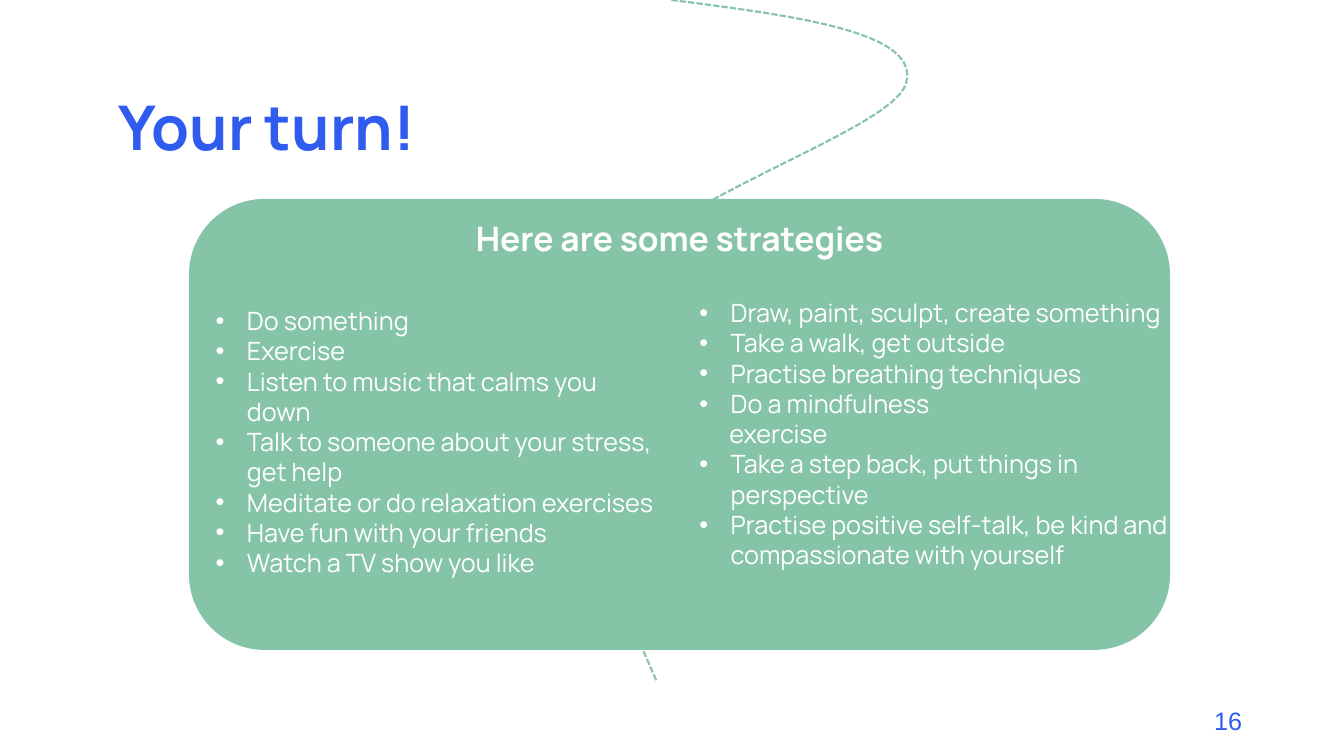
from lxml import etree
from pptx import Presentation
from pptx.dml.color import RGBColor
from pptx.enum.dml import MSO_LINE
from pptx.enum.shapes import MSO_SHAPE
from pptx.enum.text import MSO_ANCHOR, MSO_AUTO_SIZE, PP_ALIGN
from pptx.oxml.ns import qn
from pptx.util import Cm, Pt

ROUNDED = MSO_SHAPE.ROUNDED_RECTANGLE
DASH = MSO_LINE.SQUARE_DOT
TOP, MIDDLE = MSO_ANCHOR.TOP, MSO_ANCHOR.MIDDLE
NO_FIT, GROW = MSO_AUTO_SIZE.NONE, MSO_AUTO_SIZE.SHAPE_TO_FIT_TEXT
LEFT, CENTER, RIGHT = PP_ALIGN.LEFT, PP_ALIGN.CENTER, PP_ALIGN.RIGHT

GREEN, BLUE, WHITE = "86C4A7", "2F5CEE", "FFFFFF"
PATH_START = (16.92, 0)
PATH_CURVES = [
    ((20.1, 0.41), (23.22, 0.81), (22.83, 2.11)),
    ((22.45, 3.4), (15.67, 5.31), (14.61, 7.8)),
    ((13.56, 10.31), (15.04, 13.72), (16.54, 17.15)),
]
CURVE_STEPS = 32

LEFT_STRATEGIES = [
    "Do something",
    "Exercise",
    "Listen to music that calms you down",
    "Talk to someone about your stress, get help",
    "Meditate or do relaxation exercises",
    "Have fun with your friends",
    "Watch a TV show you like",
]
RIGHT_STRATEGIES = [
    "Draw, paint, sculpt, create something",
    "Take a walk, get outside",
    "Practise breathing techniques",
    ("Do a mindfulness", "exercise"),
    "Take a step back, put things in perspective",
    "Practise positive self-talk, be kind and compassionate with yourself",
]


def color(hex_value):
    """Return the colour for a hex string."""
    return RGBColor.from_string(hex_value)


def apply_format(target, values):
    """Set every attribute named in a dict of format values."""
    for attribute, value in values.items():
        setattr(target, attribute, value)


def place(shape, left, top, width, height):
    """Move and size a shape, in centimetres."""
    apply_format(shape, {"left": Cm(left), "top": Cm(top),
                         "width": Cm(width), "height": Cm(height)})


def bring_to_front(shape):
    """Move a shape to the end of the drawing order."""
    element = shape.element
    element.getparent().append(element)


def write(paragraph, text, size, hex_value, font="Manrope", bold=False, **layout):
    """Write one formatted run into a paragraph."""
    apply_format(paragraph, {"space_before": Pt(0), **layout})
    run = paragraph.add_run()
    run.text = text
    apply_format(run.font, {"name": font, "size": Pt(size), "bold": bold})
    run.font.color.rgb = color(hex_value)


def set_bullet(paragraph, margin, bullet):
    """Give a paragraph its left margin and a hanging bullet, or none."""
    properties = paragraph._p.get_or_add_pPr()
    properties.set("marL", str(Cm(margin)))
    properties.set("indent", str(Cm(-margin if bullet else 0)))
    if bullet:
        etree.SubElement(properties, qn("a:buFont")).set("typeface", "Arial")
        etree.SubElement(properties, qn("a:buChar")).set("char", "•")
    else:
        etree.SubElement(properties, qn("a:buNone"))


def bezier_points(start, curves):
    """Yield points in EMU along a chain of cubic curves."""
    for first, second, end in curves:
        for step in range(1, CURVE_STEPS + 1):
            t = step / CURVE_STEPS
            yield tuple(
                Cm((1 - t) ** 3 * a + 3 * (1 - t) ** 2 * t * b
                   + 3 * (1 - t) * t ** 2 * c + t ** 3 * d)
                for a, b, c, d in zip(start, first, second, end))
        start = end


def add_winding_path(slide):
    """Draw the dashed path that winds behind the card."""
    builder = slide.shapes.build_freeform(*map(Cm, PATH_START))
    builder.add_line_segments(bezier_points(PATH_START, PATH_CURVES), close=False)
    winding_path = builder.convert_to_shape()
    winding_path.shadow.inherit = False
    winding_path.fill.background()
    apply_format(winding_path.line, {"width": Pt(1.5), "dash_style": DASH})
    winding_path.line.color.rgb = color(GREEN)


def add_page_number(slide, number):
    """Add the page number at the lower right."""
    page_number = slide.shapes.add_textbox(Cm(23.93), Cm(17.65), Cm(7.62), Cm(1.02))
    page_number.text_frame.word_wrap = True
    write(page_number.text_frame.paragraphs[0], number, 18, BLUE,
          font="Arial", alignment=RIGHT)


def add_card(slide, heading):
    """Add the rounded card with its heading."""
    card = slide.shapes.add_shape(ROUNDED, Cm(4.78), Cm(5.03), Cm(24.69), Cm(11.33))
    card.shadow.inherit = False
    card.fill.solid()
    card.fill.fore_color.rgb = color(GREEN)
    card.line.color.rgb = color(GREEN)
    card.line.width = Pt(1)
    apply_format(card.text_frame, {"vertical_anchor": TOP, "margin_top": Cm(-0.1),
                                   "word_wrap": True})
    write(card.text_frame.paragraphs[0], heading, 24, WHITE,
          bold=True, alignment=CENTER)


def fill_title(title, text):
    """Place and write the slide title."""
    place(title, 2.74, 1.45, 29.21, 3.68)
    apply_format(title.text_frame, {"vertical_anchor": MIDDLE, "auto_size": NO_FIT})
    write(title.text_frame.paragraphs[0], text, 44, BLUE,
          bold=True, alignment=LEFT, line_spacing=0.9)
    bring_to_front(title)


def fill_strategies(body, strategies, box):
    """Write a bulleted list; a pair holds an item and its continuation."""
    place(body, *box)
    frame = body.text_frame
    apply_format(frame, {"vertical_anchor": TOP, "auto_size": GROW})
    lines = []
    for strategy in strategies:
        parts = (strategy,) if isinstance(strategy, str) else strategy
        lines += [(part, level) for level, part in enumerate(parts)]
    for index, (text, level) in enumerate(lines):
        paragraph = frame.add_paragraph() if index else frame.paragraphs[0]
        set_bullet(paragraph, 0.76 if level else 0.79, level == 0)
        write(paragraph, text, 18, WHITE, alignment=LEFT, level=level)
    bring_to_front(body)


def main():
    """Build the slide and save it."""
    deck = Presentation()
    apply_format(deck, {"slide_width": Cm(33.87), "slide_height": Cm(19.05)})
    slide = deck.slides.add_slide(deck.slide_layouts[3])
    title, left_list, right_list = slide.placeholders
    add_winding_path(slide)
    add_page_number(slide, "16")
    add_card(slide, "Here are some strategies")
    fill_strategies(left_list, LEFT_STRATEGIES, (5.18, 7.57, 11.79, 7.95))
    fill_strategies(right_list, RIGHT_STRATEGIES, (17.37, 7.37, 12.42, 7.95))
    fill_title(title, "Your turn!")
    deck.save("out.pptx")


if __name__ == "__main__":
    main()
